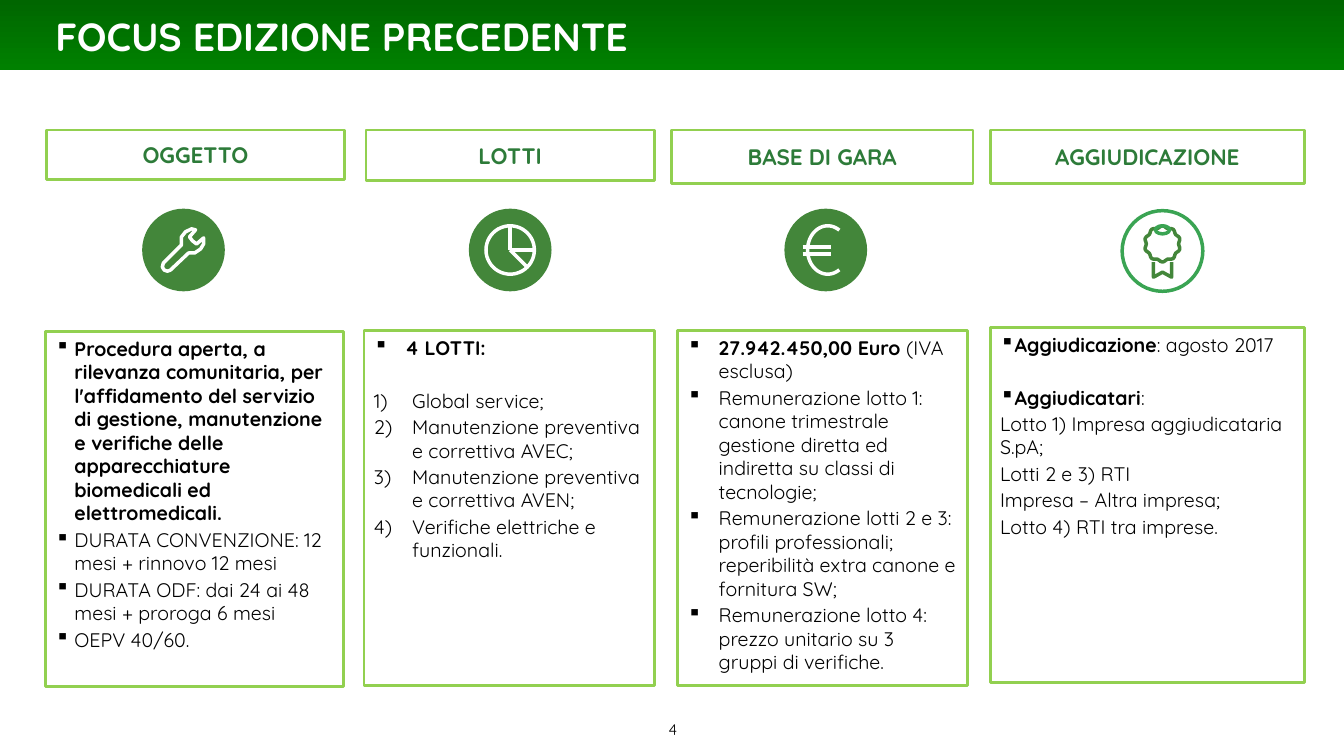
from dataclasses import dataclass
from math import cos, radians, sin
from typing import Callable

from lxml import etree
from pptx import Presentation
from pptx.dml.color import RGBColor
from pptx.enum.shapes import MSO_CONNECTOR, MSO_SHAPE
from pptx.enum.text import MSO_ANCHOR, PP_ALIGN
from pptx.oxml.ns import qn
from pptx.util import Inches, Pt

RECTANGLE, OVAL = MSO_SHAPE.RECTANGLE, MSO_SHAPE.OVAL
STRAIGHT = MSO_CONNECTOR.STRAIGHT
TOP, MIDDLE = MSO_ANCHOR.TOP, MSO_ANCHOR.MIDDLE
LEFT, CENTER = PP_ALIGN.LEFT, PP_ALIGN.CENTER

WHITE = RGBColor(0xFF, 0xFF, 0xFF)
BLACK = RGBColor(0, 0, 0)
BAR_DARK = RGBColor(0, 0x66, 0)
BAR_LIGHT = RGBColor(0, 0x80, 0)
BORDER = RGBColor(0x92, 0xD0, 0x50)
HEADING = RGBColor(0x2D, 0x7B, 0x39)
ICON = RGBColor(0x43, 0x86, 0x3A)
RING = RGBColor(0x3A, 0xA4, 0x53)
FONT = "Quicksand"
STROKE = 2.5
HEADING_TOP = 1.29
BODY_HEIGHT = 3.52

WRENCH = [(0.2, -0.12), (0.13, -0.06), (0.09, -0.09), (0.06, -0.13), (0.12, -0.2),
          (0.08, -0.21), (0.02, -0.18), (-0.02, -0.13), (-0.02, -0.05), (-0.2, 0.13),
          (-0.21, 0.17), (-0.19, 0.2), (-0.16, 0.21), (-0.13, 0.2), (0.05, 0.03),
          (0.11, 0.03), (0.17, -0.01), (0.2, -0.06)]
RIBBON = [(-0.09, 0.11), (-0.09, 0.26), (0, 0.21), (0.09, 0.26), (0.09, 0.11)]


@dataclass
class Item:
    """A paragraph: (text, bold) spans, bullet sign, hanging indent, space before."""
    spans: list
    bullet: str = ""
    indent: float = 0
    before: float = 2


@dataclass
class Column:
    title: str
    heading: tuple  # left, width, height
    body: tuple  # left, top, width
    icon: Callable
    icon_center: tuple
    items: list


def add_box(page, kind, left, top, width, height, fill=None, line=None, weight=2):
    box = page.shapes.add_shape(kind, Inches(left), Inches(top), Inches(width), Inches(height))
    box.shadow.inherit = False
    paint(box, fill, line, weight)
    return box


def paint(shape, fill, line, weight):
    if fill is None:
        shape.fill.background()
    else:
        shape.fill.solid()
        shape.fill.fore_color.rgb = fill
    if line is None:
        shape.line.fill.background()
    else:
        shape.line.color.rgb = line
        shape.line.width = Pt(weight)


def set_bullet(para, sign, indent):
    properties = para._p.get_or_add_pPr()
    properties.set("marL", str(Inches(indent)))
    properties.set("indent", str(-Inches(indent)))
    if sign == "1)":
        etree.SubElement(properties, qn("a:buAutoNum"), type="arabicParenR")
    elif sign:
        etree.SubElement(properties, qn("a:buChar"), char=sign)


def write(box, items, size, color, align=LEFT, anchor=TOP):
    frame = box.text_frame
    frame.word_wrap = True
    frame.vertical_anchor = anchor
    for index, item in enumerate(items):
        para = frame.add_paragraph() if index else frame.paragraphs[0]
        para.alignment = align
        para.space_before = Pt(item.before)
        set_bullet(para, item.bullet, item.indent)
        for text, bold in item.spans:
            span = para.add_run()
            span.text = text
            span.font.name = FONT
            span.font.size = Pt(size)
            span.font.bold = bold
            span.font.color.rgb = color


def add_text(page, left, top, width, height, text, size, color, bold, align=LEFT):
    box = page.shapes.add_textbox(Inches(left), Inches(top), Inches(width), Inches(height))
    write(box, [Item([(text, bold)], before=0)], size, color, align)


def add_disc(page, x, y, radius_x, radius_y, fill=None, line=None):
    add_box(page, OVAL, x - radius_x, y - radius_y, 2 * radius_x, 2 * radius_y, fill, line, STROKE)


def add_outline(page, x, y, points, color, close):
    """Draw a stroked path through points given as offsets from x, y."""
    corners = [(Inches(x + dx), Inches(y + dy)) for dx, dy in points]
    builder = page.shapes.build_freeform(*corners[0])
    builder.add_line_segments(corners[1:], close=close)
    outline = builder.convert_to_shape()
    outline.shadow.inherit = False
    paint(outline, None, color, STROKE)


def add_stroke(page, x, y, start, end):
    stroke = page.shapes.add_connector(STRAIGHT, Inches(x + start[0]), Inches(y + start[1]),
                                       Inches(x + end[0]), Inches(y + end[1]))
    stroke.line.color.rgb = WHITE
    stroke.line.width = Pt(STROKE)
    etree.SubElement(stroke._element.spPr, qn("a:effectLst"))


def wrench_icon(page, x, y):
    add_disc(page, x, y, 0.41, 0.41, ICON)
    add_outline(page, x, y, WRENCH, WHITE, True)


def pie_icon(page, x, y):
    add_disc(page, x, y, 0.41, 0.41, ICON)
    add_disc(page, x, y, 0.24, 0.24, line=WHITE)
    for end in [(0, -0.24), (0.24, 0), (0.17, 0.17)]:
        add_stroke(page, x, y, (0, 0), end)


def euro_icon(page, x, y):
    add_disc(page, x, y, 0.41, 0.41, ICON)
    curve = [(0.02 + 0.2 * cos(radians(angle)), -0.24 * sin(radians(angle)))
             for angle in range(55, 306, 5)]
    add_outline(page, x, y, curve, WHITE, False)
    for height in (-0.03, 0.04):
        add_stroke(page, x, y, (-0.23, height), (0.05, height))


def award_icon(page, x, y):
    add_disc(page, x, y, 0.4, 0.4, line=RING)
    rosette = []
    for angle in range(0, 360, 6):
        radius = 0.17 + 0.01 * cos(radians(10 * angle))
        rosette.append((radius * sin(radians(angle)), -0.07 - radius * cos(radians(angle))))
    add_outline(page, x, y, rosette, ICON, True)
    add_outline(page, x, y, RIBBON, ICON, False)
    add_disc(page, x, y - 0.21, 0.07, 0.04, line=RING)


def add_header(page, width):
    bar = add_box(page, RECTANGLE, 0, 0, width, 0.69)
    bar.fill.gradient()
    bar.fill.gradient_angle = 270
    for stop, color in zip(bar.fill.gradient_stops, (BAR_DARK, BAR_LIGHT)):
        stop.color.rgb = color
    add_text(page, 0.45, 0.07, 12.01, 0.47, "FOCUS EDIZIONE PRECEDENTE", 28, WHITE, True)


def add_column(page, column):
    left, width, height = column.heading
    heading = add_box(page, RECTANGLE, left, HEADING_TOP, width, height, line=BORDER)
    write(heading, [Item([(column.title, True)])], 16, HEADING, CENTER, MIDDLE)
    body = add_box(page, RECTANGLE, *column.body, BODY_HEIGHT, WHITE, BORDER)
    write(body, column.items, 14, BLACK)
    column.icon(page, *column.icon_center)


def listed(texts, bullet="", indent=0):
    return [Item([(text, False)], bullet, indent) for text in texts]


COLUMNS = [
    Column("OGGETTO", (0.46, 2.96, 0.49), (0.45, 3.29, 2.96), wrench_icon, (1.82, 2.48), [
        Item([("Procedura aperta, a rilevanza comunitaria, per l'affidamento del servizio di "
               "gestione, manutenzione e verifiche delle apparecchiature biomedicali ed "
               "elettromedicali.", True)], "▪", 0.19),
        *listed(["DURATA CONVENZIONE: 12 mesi + rinnovo 12 mesi",
                 "DURATA ODF: dai 24 ai 48 mesi + proroga 6 mesi", "OEPV 40/60."], "▪", 0.19)]),
    Column("LOTTI", (3.63, 2.86, 0.5), (3.61, 3.28, 2.88), pie_icon, (5.06, 2.48), [
        Item([("4 LOTTI:", True)], "▪", 0.31),
        Item([("Global service;", False)], "1)", 0.38, 21),
        *listed(["Manutenzione preventiva e correttiva AVEC;",
                 "Manutenzione preventiva e correttiva AVEN;",
                 "Verifiche elettriche e funzionali."], "1)", 0.38)]),
    Column("BASE DI GARA", (6.66, 2.99, 0.53), (6.72, 3.28, 2.88), euro_icon, (8.19, 2.48), [
        Item([("27.942.450,00 Euro ", True), ("(IVA esclusa)", False)], "▪", 0.31),
        *listed(["Remunerazione lotto 1: canone trimestrale gestione diretta ed indiretta su "
                 "classi di tecnologie;",
                 "Remunerazione lotti 2 e 3: profili professionali; reperibilità extra canone e "
                 "fornitura SW;",
                 "Remunerazione lotto 4: prezzo unitario su 3 gruppi di verifiche."], "▪", 0.31)]),
    Column("AGGIUDICAZIONE", (9.82, 3.12, 0.53), (9.82, 3.25, 3.12), award_icon, (11.53, 2.49), [
        Item([("Aggiudicazione", True), (": agosto 2017", False)], "▪", 0.1),
        Item([("Aggiudicatari", True), (":", False)], "▪", 0.1, 21),
        *listed(["Lotto 1) Impresa aggiudicataria S.pA;", "Lotti 2 e 3) RTI",
                 "Impresa – Altra impresa;", "Lotto 4) RTI tra imprese."])]),
]


def main():
    deck = Presentation()
    deck.slide_width, deck.slide_height = Inches(13.33), Inches(7.5)
    page = deck.slides.add_slide(deck.slide_layouts[6])
    add_header(page, 13.33)
    for column in COLUMNS:
        add_column(page, column)
    add_text(page, 5.29, 7.09, 2.77, 0.27, "4", 11, BLACK, False, CENTER)
    deck.save("out.pptx")


if __name__ == "__main__":
    main()
